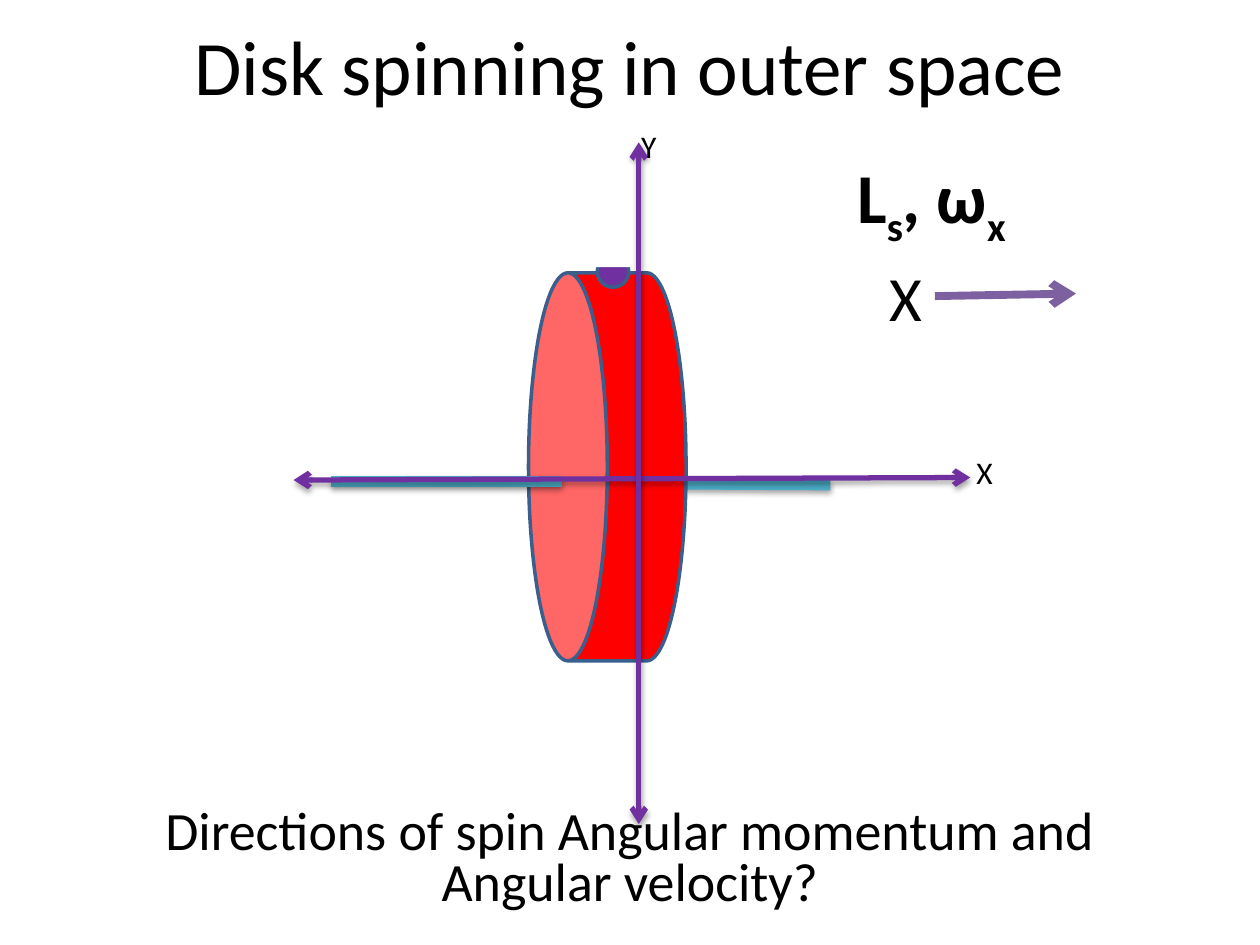
import pptx
import pptx.util
import pptx.dml.color
import pptx.enum.shapes
import pptx.enum.text
import pptx.oxml
import pptx.oxml.ns
from dataclasses import dataclass

PX = 9144  # 100 px to the inch
KIND = pptx.enum.shapes.MSO_SHAPE
ALIGN = pptx.enum.text.PP_ALIGN
FIT = pptx.enum.text.MSO_AUTO_SIZE
MID = pptx.enum.text.MSO_ANCHOR.MIDDLE
NS = pptx.oxml.ns.nsdecls("a")


@dataclass(frozen=True)
class Theme:
    font: str = "Calibri"
    ink: str = "000000"
    paper: str = "FFFFFF"
    disk: str = "FF0000"
    edge: str = "3A5F8C"
    rod: str = "4BACC6"
    axis: str = "7030A0"
    arrow: str = "7D60A0"
    title: float = 44
    ask: float = 30.8
    vector: float = 40
    sign: float = 36
    label: float = 18


THEME = Theme()


def px(*nums):
    return [pptx.util.Emu(n * PX) for n in nums]


def tint(code):
    return pptx.dml.color.RGBColor.from_string(code)


def add_runs(para, runs, size, bold=False):
    """Each run is a pair: its text and whether it is a subscript."""
    for text, sub in runs:
        run = para.add_run()
        run.text = text
        run.font.name = THEME.font
        run.font.size = pptx.util.Pt(size)
        run.font.bold = bold
        run.font.color.rgb = tint(THEME.ink)
        if sub:
            run._r.get_or_add_rPr().set("baseline", "-25000")


def add_label(shapes, box, runs, size, bold=False):
    frame = shapes.add_textbox(*px(*box)).text_frame
    frame.word_wrap = False
    frame.auto_size = FIT.SHAPE_TO_FIT_TEXT
    add_runs(frame.paragraphs[0], runs, size, bold)


def add_shape(shapes, kind, box, fill, edge=None):
    shape = shapes.add_shape(kind, *px(*box))
    shape.shadow.inherit = False
    shape.fill.solid()
    shape.fill.fore_color.rgb = tint(fill)
    if edge:
        shape.line.color.rgb = tint(edge)
        shape.line.width = pptx.util.Pt(2)
    else:
        shape.line.fill.background()
    return shape


def add_line(shapes, ends, color, width, tips=(), shade=True):
    line = shapes.add_connector(
        pptx.enum.shapes.MSO_CONNECTOR.STRAIGHT, *px(*ends))
    line.line.color.rgb = tint(color)
    line.line.width = pptx.util.Pt(width)
    for tip in tips:
        line.line._get_or_add_ln().append(
            pptx.oxml.parse_xml(f'<a:{tip} {NS} type="arrow"/>'))
    drop = ('<a:outerShdw blurRad="40000" dist="23000" dir="5400000" '
            'rotWithShape="0"><a:srgbClr val="000000"><a:alpha val="35000"/>'
            '</a:srgbClr></a:outerShdw>') if shade else ""
    line._element.spPr.append(
        pptx.oxml.parse_xml(f"<a:effectLst {NS}>{drop}</a:effectLst>"))


def draw_title(slide, box):
    title = slide.shapes.title
    title.left, title.top, title.width, title.height = px(*box)
    frame = title.text_frame
    frame.vertical_anchor = MID
    para = frame.paragraphs[0]
    para.alignment = ALIGN.CENTER
    add_runs(para, [("Disk spinning in outer space", False)], THEME.title)


def draw_ask(slide, box):
    frame = slide.shapes.add_textbox(*px(*box)).text_frame
    frame.word_wrap = True
    frame.vertical_anchor = MID
    para = frame.paragraphs[0]
    para.alignment = ALIGN.CENTER
    para.line_spacing = 0.8
    text = "Directions of spin Angular momentum and Angular velocity?"
    add_runs(para, [(text, False)], THEME.ask)


def draw_vector(slide, box):
    x, y, w, h = box
    # Names of the vectors
    runs = [(" L", False), ("s", True), (", ω", False), ("x", True)]
    add_label(slide.shapes, (x, y, 154, 77), runs, THEME.vector, True)
    # Direction
    add_label(slide.shapes, (x + 38, y + 83, 46, 71), [("X", False)],
              THEME.sign)
    add_line(slide.shapes, (x + 84, y + 118, x + w, y + 116),
             THEME.arrow, 4.5, ["tailEnd"], shade=False)


def draw_disk(slide, box):
    x, y, w, h = box
    group = slide.shapes.add_group_shape().shapes
    mid = y + h // 2 + 11
    # Rod behind, disk, rod in front
    add_line(group, (x + 57, mid + 2, x + 240, mid + 3), THEME.rod, 6)
    can = add_shape(group, KIND.CAN,
                    (x + (w - h) // 2, y + (h - w) // 2, h, w),
                    THEME.disk, THEME.edge)
    # The can is upright before its quarter turn
    can.left, can.top, can.width, can.height = px(
        x + (w - h) // 2, y + (h - w) // 2, h, w)
    can.left, can.top, can.width, can.height = px(x - 91, y + 91, 308, 125)
    can.adjustments[0] = 0.5
    can.rotation = 270
    add_line(group, (x - 156, mid, x + 27, mid), THEME.rod, 6)
    # Mark on the rim, its upper half covered
    add_shape(slide.shapes, KIND.OVAL, (x + 55, y - 14, 25, 25),
              THEME.axis, THEME.edge)
    add_shape(slide.shapes, KIND.RECTANGLE, (x - 23, y - 63, 158, 58),
              THEME.paper)


def draw_axes(slide, box):
    x, y, w, h = box
    group = slide.shapes.add_group_shape().shapes
    tips = ["headEnd", "tailEnd"]
    # X axis
    add_line(group, (x, y + 268, x + w, y + 266), THEME.axis, 3, tips)
    add_label(group, (x + w - 5, y + 242, 33, 40), [("X", False)],
              THEME.label)
    # Y axis
    add_line(group, (x + 274, y + h, x + 274, y), THEME.axis, 3, tips)
    add_label(group, (x + 266, y - 17, 33, 40), [("Y", False)], THEME.label)


def main():
    deck = pptx.Presentation()
    deck.slide_width, deck.slide_height = px(1000, 750)
    slide = deck.slides.add_slide(deck.slide_layouts[5])
    draw_title(slide, (50, 1, 900, 100))
    draw_ask(slide, (50, 633, 900, 100))
    draw_vector(slide, (658, 117, 196, 154))
    draw_disk(slide, (419, 217, 125, 308))
    draw_axes(slide, (233, 113, 537, 541))
    deck.save("out.pptx")


if __name__ == "__main__":
    main()
